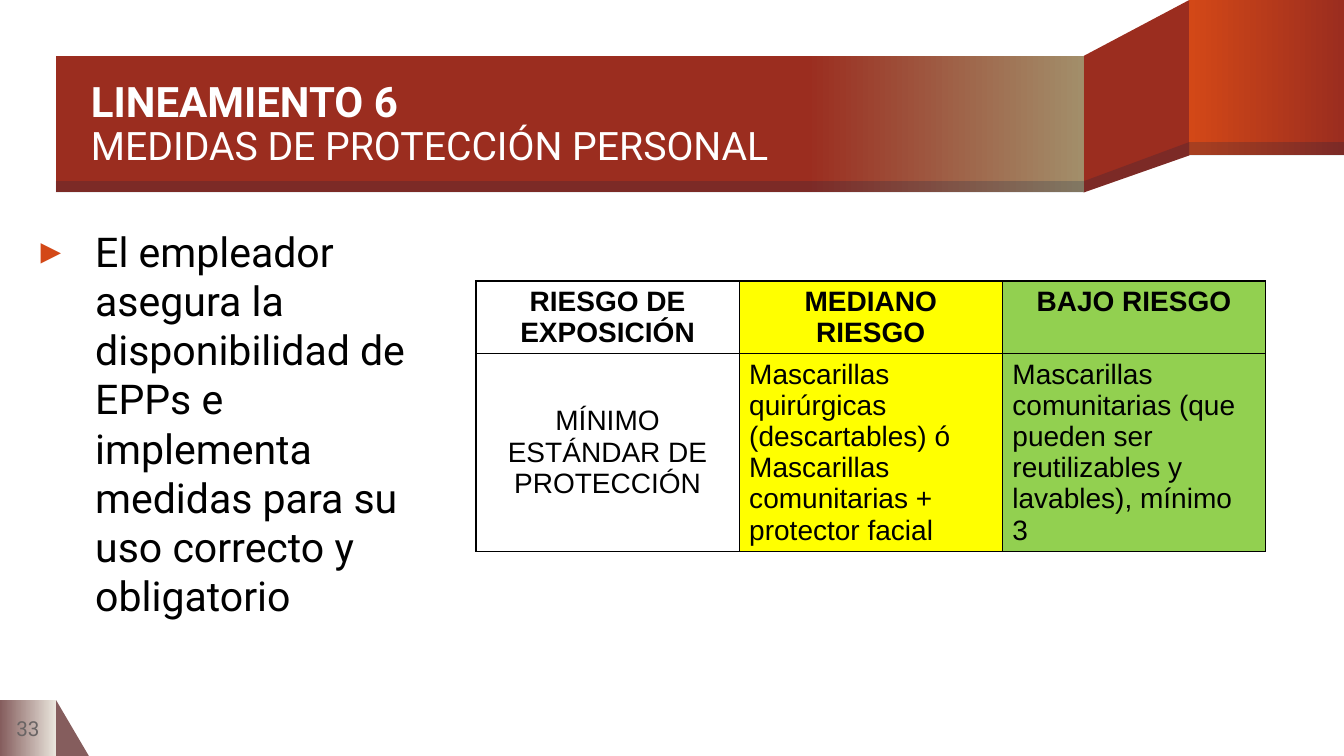
from copy import deepcopy
from dataclasses import dataclass

from lxml import etree
from pptx import Presentation, util as u
from pptx.dml import color
from pptx.enum import shapes, text
from pptx.oxml import ns

COLORS = {
    "red": "9B2D1F", "orange": "D34817", "tan": "A28E6A", "mauve": "855D5D",
    "cream": "E9E5DC", "shade": "001F46", "grey": "696464", "white": "FFFFFF",
    "black": "000000", "yellow": "FFFF00", "green": "92D050",
}
RECTANGLE = shapes.MSO_SHAPE.RECTANGLE
TRIANGLE = shapes.MSO_SHAPE.RIGHT_TRIANGLE
CENTER = text.PP_ALIGN.CENTER
LEFT = text.PP_ALIGN.LEFT
TOP = text.MSO_ANCHOR.TOP
MIDDLE = text.MSO_ANCHOR.MIDDLE

# Horizontal folds of the ribbon and the vertical edges of its faces
BAND_LEFT, FOLD_LEFT, FOLD_RIGHT, SLIDE_WIDTH = 40, 774, 849.5, 960
BAND_TOP, BAND_BOTTOM, BACK_BOTTOM = 40, 137.5, 111
BAND_SHADE, BACK_SHADE = 129.5, 101.5
CORNER_TOP, CORNER_SIZE = 500, 40


@dataclass
class Panel:
    left: float
    top: float
    right: float
    bottom: float
    stops: tuple[tuple[float, str], ...]
    kind: shapes.MSO_SHAPE = RECTANGLE
    alpha: int = 100


@dataclass
class Fold:
    points: tuple[tuple[float, float], ...]
    fill: str
    alpha: int = 100


@dataclass
class CellStyle:
    content: str
    fill: str
    bold: bool = False
    align: text.PP_ALIGN = LEFT
    anchor: text.MSO_ANCHOR = TOP


DECORATION = (
    Panel(40, CORNER_TOP, 63.5, 540, ((0, "mauve"),), TRIANGLE),
    Panel(0, CORNER_TOP, CORNER_SIZE, 540, ((0, "mauve"), (1, "cream"))),
    Fold(((FOLD_RIGHT, 0), (FOLD_LEFT, BAND_TOP), (FOLD_LEFT, BAND_BOTTOM),
          (FOLD_RIGHT, BACK_BOTTOM)), "red"),
    Panel(FOLD_RIGHT, 0, SLIDE_WIDTH, BACK_BOTTOM, ((0, "orange"), (1, "red"))),
    Panel(BAND_LEFT, BAND_TOP, FOLD_LEFT, BAND_BOTTOM,
          ((0, "red"), (0.73, "red"), (1, "tan"))),
    Fold(((FOLD_RIGHT, BACK_SHADE), (FOLD_LEFT, BAND_SHADE),
          (FOLD_LEFT, BAND_BOTTOM), (FOLD_RIGHT, BACK_BOTTOM)), "shade", 20),
    Panel(FOLD_RIGHT, BACK_SHADE, SLIDE_WIDTH, BACK_BOTTOM, ((0, "shade"),), alpha=20),
    Panel(BAND_LEFT, BAND_SHADE, FOLD_LEFT, BAND_BOTTOM, ((0, "shade"),), alpha=20),
)

RISK_ROWS = (
    (CellStyle("RIESGO DE EXPOSICIÓN", "white", True, CENTER),
     CellStyle("MEDIANO RIESGO", "yellow", True, CENTER),
     CellStyle("BAJO RIESGO", "green", True, CENTER)),
    (CellStyle("MÍNIMO ESTÁNDAR DE PROTECCIÓN", "white", False, CENTER, MIDDLE),
     CellStyle("Mascarillas quirúrgicas (descartables) ó\n"
               "Mascarillas comunitarias + protector facial", "yellow"),
     CellStyle("Mascarillas comunitarias (que pueden ser reutilizables y "
               "lavables), mínimo 3", "green")),
)


def rgb(name: str) -> color.RGBColor:
    return color.RGBColor.from_string(COLORS[name])


def fill_solid(shape, name: str, alpha: int) -> None:
    shape.fill.solid()
    shape.fill.fore_color.rgb = rgb(name)
    if alpha < 100:
        value = shape._element.spPr.find(".//" + ns.qn("a:srgbClr"))
        etree.SubElement(value, ns.qn("a:alpha")).set("val", str(alpha * 1000))


def fill_gradient(shape, stops: tuple[tuple[float, str], ...]) -> None:
    shape.fill.gradient()
    shape.fill.gradient_angle = 0
    stop_list = shape._element.spPr.find(".//" + ns.qn("a:gsLst"))
    while len(stop_list) < len(stops):
        stop_list.append(deepcopy(stop_list[0]))
    for stop, (position, name) in zip(shape.fill.gradient_stops, stops):
        stop.position = position
        stop.color.rgb = rgb(name)


def draw_panel(slide, panel: Panel) -> None:
    shape = slide.shapes.add_shape(
        panel.kind, u.Pt(panel.left), u.Pt(panel.top),
        u.Pt(panel.right - panel.left), u.Pt(panel.bottom - panel.top))
    shape.shadow.inherit = False
    shape.line.fill.background()
    if len(panel.stops) > 1:
        fill_gradient(shape, panel.stops)
    else:
        fill_solid(shape, panel.stops[0][1], panel.alpha)


def draw_fold(slide, fold: Fold) -> None:
    points = [(u.Pt(x), u.Pt(y)) for x, y in fold.points]
    builder = slide.shapes.build_freeform(*points[0])
    builder.add_line_segments(points[1:], close=True)
    shape = builder.convert_to_shape()
    shape.shadow.inherit = False
    shape.line.fill.background()
    fill_solid(shape, fold.fill, fold.alpha)


def format_run(run, size: float, name: str, font: str = "Roboto", bold: bool = False) -> None:
    run.font.size = u.Pt(size)
    run.font.name = font
    run.font.bold = bold
    run.font.color.rgb = rgb(name)


def place_text(shape, bounds: tuple[float, ...], anchor: text.MSO_ANCHOR):
    """Move a text shape, clear its insets and return its text frame."""
    shape.left, shape.top, shape.width, shape.height = map(u.Pt, bounds)
    frame = shape.text_frame
    frame.margin_left = frame.margin_top = frame.margin_right = frame.margin_bottom = 0
    frame.word_wrap = True
    frame.auto_size = text.MSO_AUTO_SIZE.NONE
    frame.vertical_anchor = anchor
    return frame


def write_title(slide) -> None:
    title = slide.shapes.title
    slide.shapes._spTree.append(title._element)
    paragraph = place_text(title, (65, 41, 709, 96.5), MIDDLE).paragraphs[0]
    paragraph.text = "LINEAMIENTO 6\vMEDIDAS DE PROTECCIÓN PERSONAL"
    paragraph.alignment = LEFT
    paragraph.line_spacing = 0.9
    heading, subject = paragraph.runs
    format_run(heading, 30, "white", bold=True)
    format_run(subject, 28, "white")
    line_break = paragraph._p.find(ns.qn("a:br"))
    line_break.append(deepcopy(heading._r.get_or_add_rPr()))


def write_body(slide) -> None:
    body = slide.placeholders[1]
    slide.shapes._spTree.append(body._element)
    paragraph = place_text(body, (20, 161.5, 276.5, 184.5), TOP).paragraphs[0]
    paragraph.text = ("El empleador asegura la disponibilidad de EPPs e implementa "
                      "medidas para su uso correcto y obligatorio")
    paragraph.alignment = LEFT
    paragraph.space_before = u.Pt(8)
    format_run(paragraph.runs[0], 29.3, "black")
    properties = paragraph._p.get_or_add_pPr()
    properties.set("marL", str(u.Pt(48)))
    properties.set("indent", str(u.Pt(-39)))
    bullet_color = etree.SubElement(properties, ns.qn("a:buClr"))
    etree.SubElement(bullet_color, ns.qn("a:srgbClr")).set("val", COLORS["orange"])
    etree.SubElement(properties, ns.qn("a:buFont")).set("typeface", "Roboto")
    etree.SubElement(properties, ns.qn("a:buChar")).set("char", "▸")


def write_page_number(slide) -> None:
    bounds = (0, CORNER_TOP, CORNER_SIZE, CORNER_SIZE)
    box = slide.shapes.add_textbox(*map(u.Pt, bounds))
    paragraph = place_text(box, bounds, MIDDLE).paragraphs[0]
    paragraph.text = "33"
    paragraph.alignment = CENTER
    format_run(paragraph.runs[0], 14.7, "grey")


def fill_cell(cell, style: CellStyle) -> None:
    cell.text_frame.text = style.content
    cell.vertical_anchor = style.anchor
    for paragraph in cell.text_frame.paragraphs:
        paragraph.alignment = style.align
        format_run(paragraph.runs[0], 20, "black", "Arial", style.bold)
    properties = cell._tc.get_or_add_tcPr()
    for side in ("a:lnL", "a:lnR", "a:lnT", "a:lnB"):
        line = etree.SubElement(properties, ns.qn(side), w=str(u.Pt(1)))
        solid = etree.SubElement(line, ns.qn("a:solidFill"))
        etree.SubElement(solid, ns.qn("a:srgbClr")).set("val", COLORS["black"])
    cell.fill.solid()
    cell.fill.fore_color.rgb = rgb(style.fill)


def draw_risk_table(slide) -> None:
    table = slide.shapes.add_table(
        2, 3, u.Pt(340), u.Pt(200.75), u.Pt(564), u.Pt(192.5)).table
    table.first_row = table.horz_banding = False
    for row, height, styles in zip(table.rows, (51.5, 141), RISK_ROWS):
        row.height = u.Pt(height)
        for cell, style in zip(row.cells, styles):
            fill_cell(cell, style)


def main() -> None:
    presentation = Presentation()
    presentation.slide_width, presentation.slide_height = u.Pt(SLIDE_WIDTH), u.Pt(540)
    slide = presentation.slides.add_slide(presentation.slide_layouts[1])
    for item in DECORATION:
        if isinstance(item, Panel):
            draw_panel(slide, item)
        else:
            draw_fold(slide, item)
    write_title(slide)
    write_body(slide)
    write_page_number(slide)
    draw_risk_table(slide)
    presentation.save("out.pptx")


if __name__ == "__main__":
    main()
